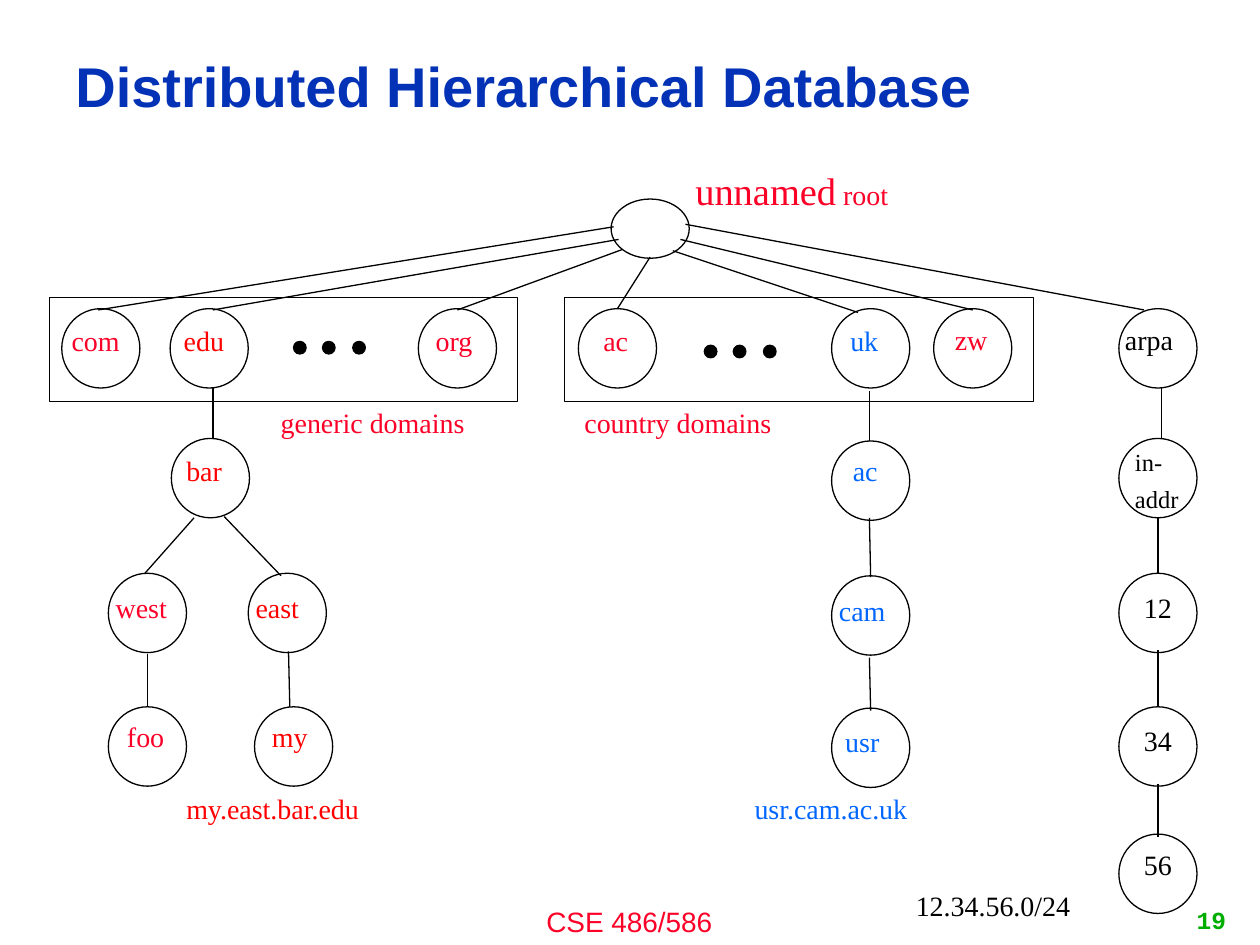
import pptx
import pptx.dml.color
import pptx.enum.shapes
import pptx.enum.text
import pptx.oxml.ns
import pptx.util
from lxml import etree

SHAPES = pptx.enum.shapes.MSO_SHAPE
ALIGN = pptx.enum.text.PP_ALIGN
ANCHOR = pptx.enum.text.MSO_ANCHOR
CRIMSON, RED, BLUE, BLACK = "FC0128", "FF0000", "0066FF", "000000"
NAVY, GREEN = "0332B7", "00AE00"
CIRCLE_WIDTH, CIRCLE_HEIGHT = 62, 63


def px(length):
    return pptx.util.Emu(length * 9144)


def color(value):
    return pptx.dml.color.RGBColor.from_string(value)


class TreeSlide:
    """Draws the parts of a name tree on one slide, at 100 px to the inch."""

    font = "Times New Roman"
    size = 16
    line_width = 0.75

    def __init__(self, page):
        self.page = page

    def outline(self, kind, left, top, width, height, fill=None, parent=None):
        shapes = (parent or self.page).shapes
        shape = shapes.add_shape(kind, px(left), px(top), px(width), px(height))
        shape.shadow.inherit = False
        if fill:
            shape.fill.solid()
            shape.fill.fore_color.rgb = color(fill)
        else:
            shape.fill.background()
        shape.line.color.rgb = color(BLACK)
        shape.line.width = pptx.util.Pt(self.line_width)
        return shape

    def text(self, words, left, top, width, height, ink, size=None, font=None,
             bold=False, align=ALIGN.LEFT, anchor=ANCHOR.TOP, wrap=False, spacing=None):
        box = self.page.shapes.add_textbox(px(left), px(top), px(width), px(height))
        frame = box.text_frame
        frame.text = words
        frame.word_wrap = wrap
        frame.vertical_anchor = anchor
        for para in frame.paragraphs:
            para.alignment = align
            para.line_spacing = spacing
            for span in para.runs:
                self.style(span, ink, size or self.size, font or self.font, bold)
        return box

    def style(self, span, ink, size, font, bold=False):
        span.font.name = font
        span.font.size = pptx.util.Pt(size)
        span.font.bold = bold
        span.font.color.rgb = color(ink)

    def node(self, left, top):
        return self.outline(SHAPES.OVAL, left, top, CIRCLE_WIDTH, CIRCLE_HEIGHT)

    def dots(self, left, top):
        group = self.page.shapes.add_group_shape()
        for index in range(3):
            self.outline(SHAPES.OVAL, left + index * 47 // 2, top, 10, 10, BLACK, group)

    def edge(self, start, end):
        line = self.page.shapes.add_connector(
            pptx.enum.shapes.MSO_CONNECTOR.STRAIGHT, *map(px, start + end))
        line.line.color.rgb = color(BLACK)
        line.line.width = pptx.util.Pt(self.line_width)
        properties = line._element.spPr
        etree.SubElement(properties, pptx.oxml.ns.qn("a:effectLst"))


NODES = [
    (49, 245, "com", 47, 252, 69, CRIMSON),
    (135, 245, "edu", 136, 252, 63, RED),
    (332, 245, "org", 336, 252, 60, CRIMSON),
    (459, 245, "ac", 469, 252, 46, CRIMSON),
    (660, 245, "uk", 665, 252, 51, BLUE),
    (741, 245, "zw", 748, 251, 53, CRIMSON),
    (888, 245, "arpa", 883, 251, 76, BLACK),
    (136, 348, "bar", 138, 355, 62, RED),
    (86, 455, "west", 82, 464, 73, CRIMSON),
    (197, 455, "east", 193, 464, 66, RED),
    (86, 561, "foo", 91, 566, 57, CRIMSON),
    (202, 561, "my", 206, 566, 57, RED),
    (660, 350, "ac", 667, 355, 46, BLUE),
    (660, 457, "cam", 656, 466, 69, BLUE),
    (660, 562, "usr", 661, 570, 59, BLUE),
    (888, 455, "12", 898, 464, 48, BLACK),
    (888, 561, "34", 898, 569, 48, BLACK),
    (888, 662, "56", 898, 668, 48, BLACK),
]

CAPTIONS = [
    ("generic domains", 213, 317, 203, CRIMSON),
    ("country domains", 454, 317, 206, CRIMSON),
    ("my.east.bar.edu", 138, 623, 209, RED),
    ("usr.cam.ac.uk", 589, 623, 186, BLUE),
    ("12.34.56.0/24", 717, 700, 174, BLACK),
]

EDGES = [
    ((487, 180), (78, 246)), ((491, 190), (169, 246)), ((494, 198), (363, 246)),
    ((516, 204), (490, 245)), ((544, 178), (908, 246)), ((540, 190), (772, 246)),
    ((534, 199), (681, 248)),
    ((169, 308), (169, 348)), ((154, 411), (115, 455)), ((178, 410), (223, 457)),
    ((117, 519), (117, 561)), ((229, 517), (230, 561)),
    ((690, 310), (690, 350)), ((690, 411), (691, 458)), ((690, 522), (691, 564)),
    ((922, 307), (922, 348)), ((919, 410), (919, 455)), ((919, 516), (919, 561)),
    ((919, 622), (919, 664)),
]


def main():
    deck = pptx.Presentation()
    deck.slide_width, deck.slide_height = px(1000), px(750)
    tree = TreeSlide(deck.slides.add_slide(deck.slide_layouts[6]))

    tree.text("Distributed Hierarchical Database", 50, 8, 900, 125, NAVY, 32, "Arial",
              bold=True, anchor=ANCHOR.MIDDLE, wrap=True, spacing=0.9)
    tree.text("CSE 486/586", 333, 713, 333, 37, CRIMSON, font="Arial",
              align=ALIGN.CENTER, wrap=True)
    tree.text("19", 750, 710, 233, 40, GREEN, 14, "Courier New",
              bold=True, align=ALIGN.RIGHT, anchor=ANCHOR.MIDDLE, wrap=True)

    for left in (39, 448):
        tree.outline(SHAPES.RECTANGLE, left, 236, 372, 83)
    tree.dots(233, 271)
    tree.dots(559, 274)

    tree.outline(SHAPES.OVAL, 485, 158, 62, 47)
    root = tree.text("unnamed", 542, 128, 185, 47, CRIMSON, 22)
    span = root.text_frame.paragraphs[0].add_run()
    span.text = " root"
    tree.style(span, CRIMSON, tree.size, tree.font)

    for start, end in EDGES:
        tree.edge(start, end)
    for left, top, name, text_left, text_top, width, ink in NODES:
        tree.node(left, top)
        tree.text(name, text_left, text_top, width, 43, ink)
    tree.node(888, 348)
    address = tree.text("in-\naddr", 891, 354, 60, 47, BLACK, 14, spacing=0.8)
    address.text_frame.paragraphs[1].space_before = pptx.util.Pt(8)
    for words, left, top, width, ink in CAPTIONS:
        tree.text(words, left, top, width, 43, ink)

    deck.save("out.pptx")


if __name__ == "__main__":
    main()
